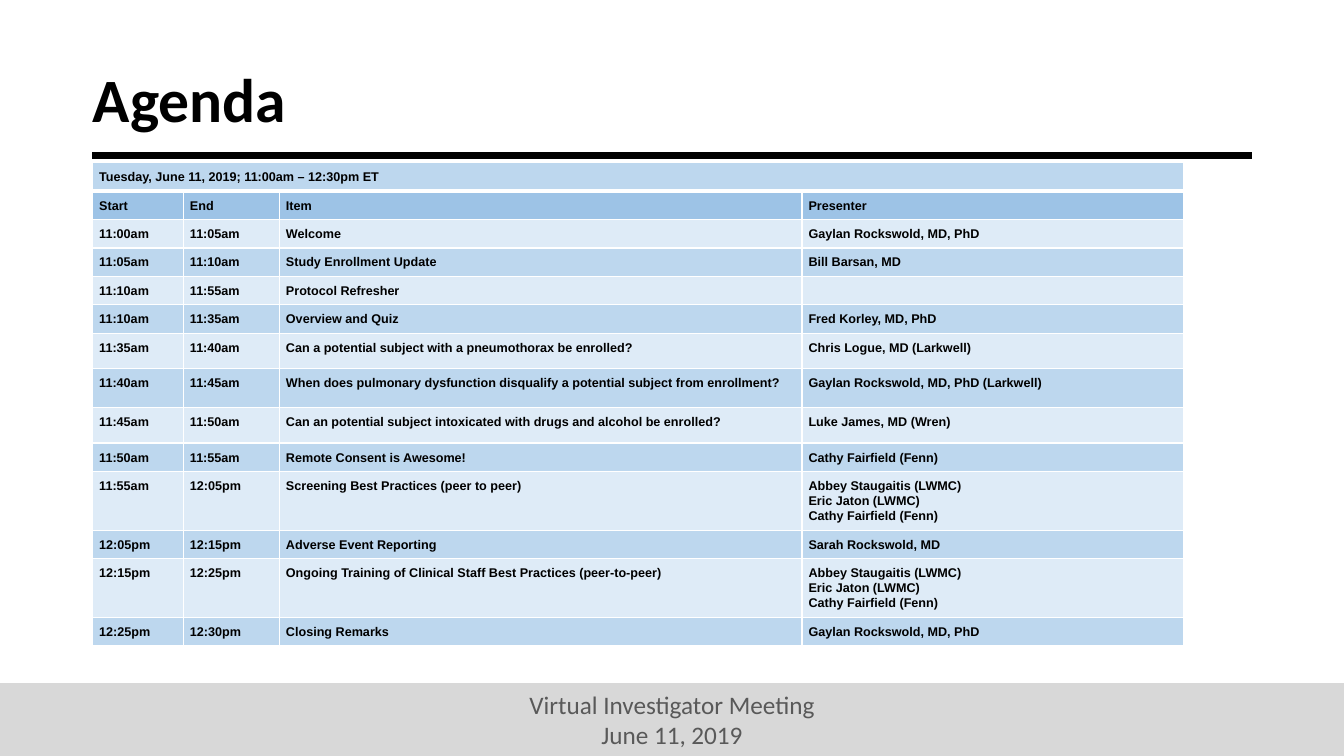
from lxml import etree
from pptx import Presentation
from pptx.dml.color import RGBColor
from pptx.enum.shapes import MSO_CONNECTOR, MSO_SHAPE
from pptx.enum.text import MSO_ANCHOR, PP_ALIGN
from pptx.oxml.ns import qn
from pptx.util import Pt

STRAIGHT, RECT = MSO_CONNECTOR.STRAIGHT, MSO_SHAPE.RECTANGLE
TOP, MIDDLE, BOTTOM = MSO_ANCHOR.TOP, MSO_ANCHOR.MIDDLE, MSO_ANCHOR.BOTTOM
LEFT, CENTER = PP_ALIGN.LEFT, PP_ALIGN.CENTER

TITLE = "Agenda"
FOOTER = ["Virtual Investigator Meeting", "June 11, 2019"]
SESSION = "Tuesday, June 11, 2019; 11:00am – 12:30pm ET"
HEADINGS = ("Start", "End", "Item", "Presenter")
PEERS = "Abbey Staugaitis (LWMC)\nEric Jaton (LWMC)\nCathy Fairfield (Fenn)"
ITEMS = [
    ("11:00am", "11:05am", "Welcome", "Gaylan Rockswold, MD, PhD"),
    ("11:05am", "11:10am", "Study Enrollment Update", "Bill Barsan, MD"),
    ("11:10am", "11:55am", "Protocol Refresher", ""),
    ("11:10am", "11:35am", "Overview and Quiz", "Fred Korley, MD, PhD"),
    ("11:35am", "11:40am", "Can a potential subject with a pneumothorax be enrolled?",
     "Chris Logue, MD (Larkwell)"),
    ("11:40am", "11:45am",
     "When does pulmonary dysfunction disqualify a potential subject from enrollment?",
     "Gaylan Rockswold, MD, PhD (Larkwell)"),
    ("11:45am", "11:50am",
     "Can an potential subject intoxicated with drugs and alcohol be enrolled?",
     "Luke James, MD (Wren)"),
    ("11:50am", "11:55am", "Remote Consent is Awesome!", "Cathy Fairfield (Fenn)"),
    ("11:55am", "12:05pm", "Screening Best Practices (peer to peer)", PEERS),
    ("12:05pm", "12:15pm", "Adverse Event Reporting", "Sarah Rockswold, MD"),
    ("12:15pm", "12:25pm",
     "Ongoing Training of Clinical Staff Best Practices (peer‐to‐peer)", PEERS),
    ("12:25pm", "12:30pm", "Closing Remarks", "Gaylan Rockswold, MD, PhD"),
]

THEME = {
    "black": "000000", "white": "FFFFFF", "grey": "595959", "bar": "D8D8D8",
    "heading": "9DC3E6", "dark": "BDD7EE", "light": "DEEBF7",
    "head_font": "Calibri", "table_font": "Arial",
    "title": 44, "footer": 18, "cell": 9,
}

SLIDE_W, SLIDE_H = 960, 540
MARGIN_X, RULE_Y, RULE_RIGHT = 66, 111.1, 894.2
FOOTER_H = 52
TABLE_X, TABLE_Y = 66.2, 116.2
COLS = [64.8, 68.6, 373.3, 272.5]
ROW_H, TALL_ROWS = 20.3, {6: 25.2, 7: 28.1, 8: 25.2, 10: 41.9, 12: 41.9}
PAD, CELL_LEADING = 4.7, 10.8
BORDER, SESSION_BORDER = 1, 3


def rgb(name):
    return RGBColor.from_string(THEME[name])


def write(tf, lines, font, size, color, bold=False, align=LEFT, spacing=1.0):
    for i, line in enumerate(lines):
        p = tf.paragraphs[0] if i == 0 else tf.add_paragraph()
        p.alignment = align
        p.line_spacing = spacing
        if not line:
            p._p.get_or_add_endParaRPr().set("sz", str(THEME[size] * 100))
            continue
        r = p.add_run()
        r.text = line
        r.font.name = THEME[font]
        r.font.size = Pt(THEME[size])
        r.font.bold = bold
        r.font.color.rgb = rgb(color)


def set_borders(cell, top, bottom):
    tc_pr = cell._tc.get_or_add_tcPr()
    for side, width in (("L", BORDER), ("R", BORDER), ("T", top), ("B", bottom)):
        ln = etree.SubElement(tc_pr, qn(f"a:ln{side}"), w=str(Pt(width)))
        fill = etree.SubElement(ln, qn("a:solidFill"))
        etree.SubElement(fill, qn("a:srgbClr"), val=THEME["white"])


def add_title(s):
    rule = s.shapes.add_connector(STRAIGHT, Pt(MARGIN_X), Pt(RULE_Y), Pt(RULE_RIGHT), Pt(RULE_Y))
    rule.line.color.rgb = rgb("black")
    rule.line.width = Pt(4.5)
    etree.SubElement(rule._element.spPr, qn("a:effectLst"))
    tf = s.shapes.add_textbox(Pt(59.2), Pt(20.9), Pt(746.6), Pt(104.4)).text_frame
    tf.word_wrap = True
    tf.vertical_anchor = MIDDLE
    write(tf, [TITLE], "head_font", "title", "black", bold=True, spacing=0.9)


def add_footer(s):
    bar = s.shapes.add_shape(RECT, 0, Pt(SLIDE_H - FOOTER_H), Pt(SLIDE_W), Pt(FOOTER_H))
    bar.shadow.inherit = False
    bar.fill.solid()
    bar.fill.fore_color.rgb = rgb("bar")
    bar.line.fill.background()
    bar.text_frame.vertical_anchor = MIDDLE
    write(bar.text_frame, FOOTER, "head_font", "footer", "grey", align=CENTER)


def add_agenda(s):
    rows = [(SESSION, "", "", ""), HEADINGS] + ITEMS
    heights = [TALL_ROWS.get(i, ROW_H) for i in range(len(rows))]
    table = s.shapes.add_table(len(rows), len(COLS), Pt(TABLE_X), Pt(TABLE_Y),
                               Pt(sum(COLS)), Pt(sum(heights))).table
    table.first_row = table.horz_banding = False
    for col, width in zip(table.columns, COLS):
        col.width = Pt(width)
    for i, (row, height) in enumerate(zip(rows, heights)):
        table.rows[i].height = Pt(height)
        shade = "heading" if i == 1 else "light" if i > 1 and i % 2 == 0 else "dark"
        top = SESSION_BORDER if i == 1 else BORDER
        bottom = SESSION_BORDER if i == 0 else BORDER
        for j, text in enumerate(row):
            cell = table.cell(i, j)
            cell.margin_left = cell.margin_right = Pt(PAD)
            cell.margin_top = cell.margin_bottom = Pt(PAD)
            cell.vertical_anchor = BOTTOM if (i, j) == (10, 3) else TOP
            set_borders(cell, top, bottom)
            cell.fill.solid()
            cell.fill.fore_color.rgb = rgb(shade)
            write(cell.text_frame, text.split("\n"), "table_font", "cell", "black",
                  bold=True, spacing=Pt(CELL_LEADING))
    table.cell(0, 0).merge(table.cell(0, len(COLS) - 1))


def main():
    prs = Presentation()
    prs.slide_width, prs.slide_height = Pt(SLIDE_W), Pt(SLIDE_H)
    s = prs.slides.add_slide(prs.slide_layouts[6])
    add_title(s)
    add_footer(s)
    add_agenda(s)
    prs.save("out.pptx")


if __name__ == "__main__":
    main()
